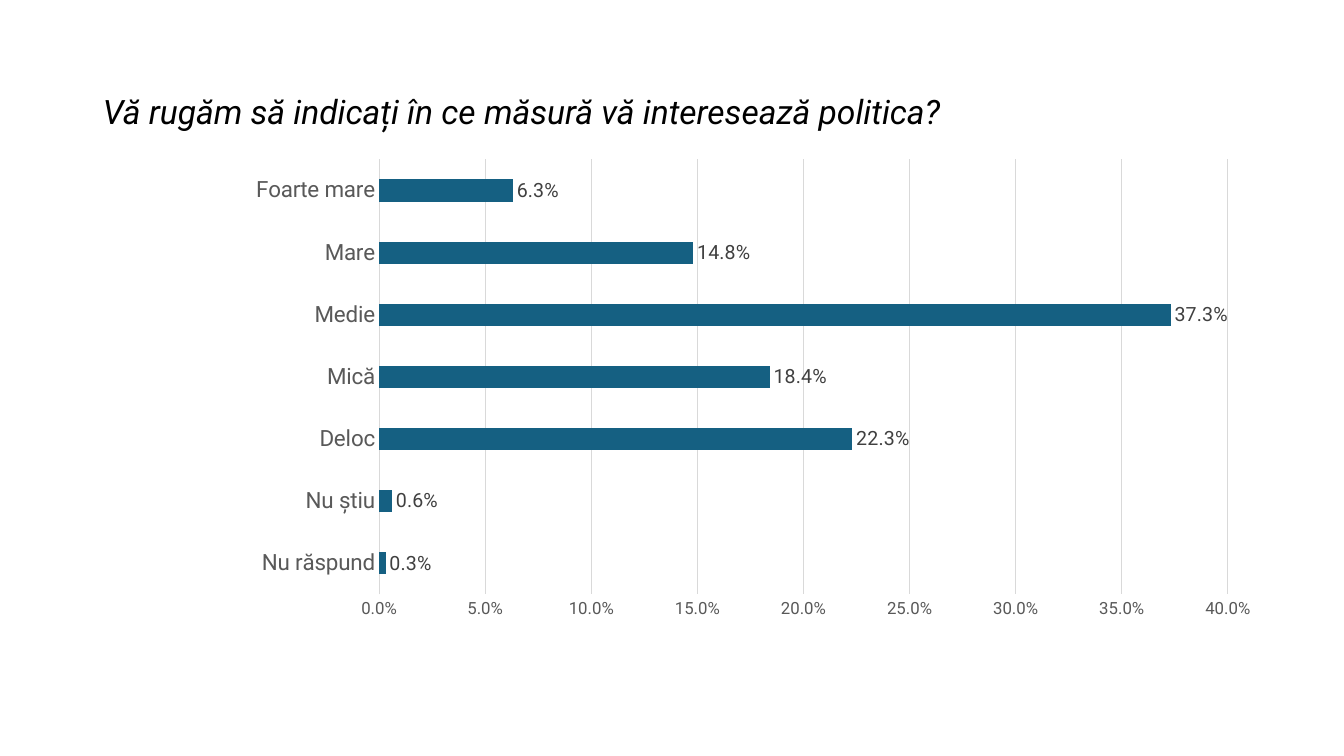
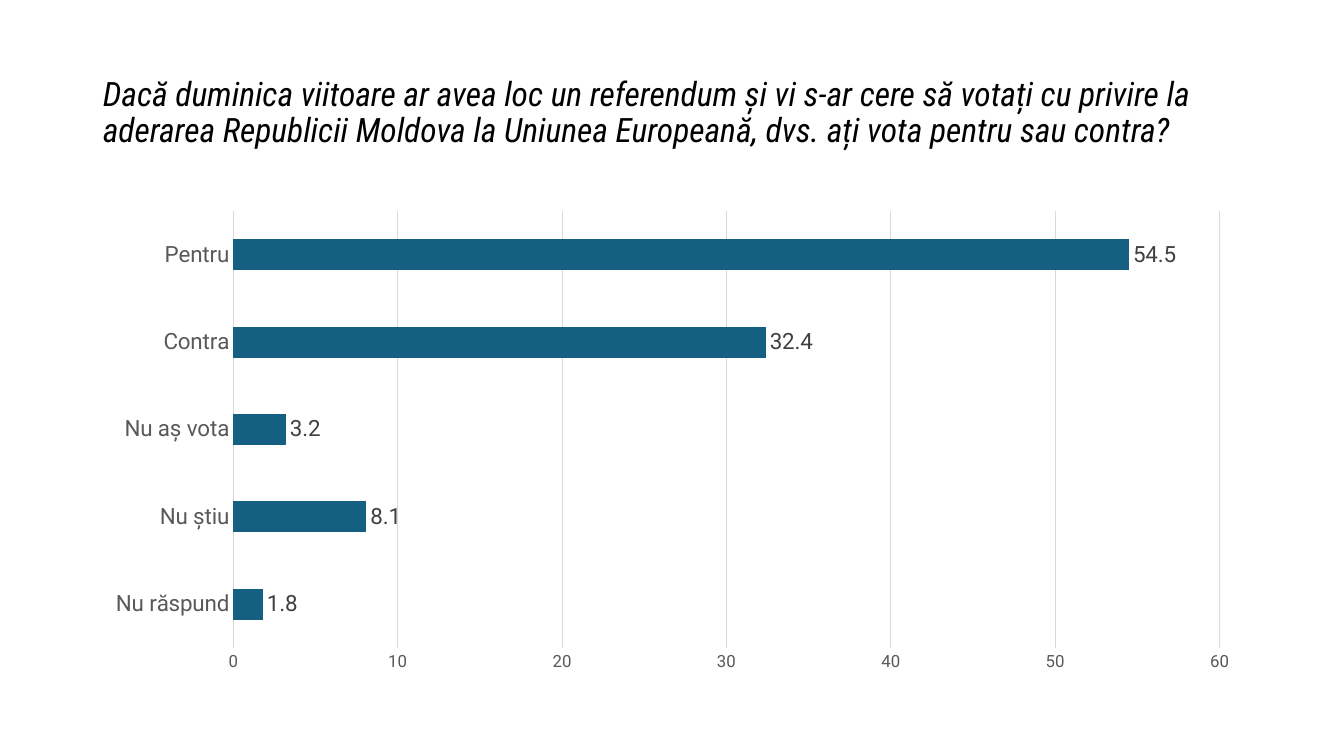
from pptx import Presentation
from pptx.chart.data import CategoryChartData
from pptx.dml.color import RGBColor
from pptx.enum.chart import XL_CHART_TYPE, XL_LABEL_POSITION, XL_TICK_MARK
from pptx.enum.text import MSO_ANCHOR, MSO_AUTO_SIZE, PP_ALIGN
from pptx.oxml import parse_xml
from pptx.oxml.ns import nsdecls, qn
from pptx.util import Inches, Pt

BLACK = RGBColor(0x00, 0x00, 0x00)
GRAY = RGBColor(0x59, 0x59, 0x59)
DARK = RGBColor(0x40, 0x40, 0x40)
GRID = RGBColor(0xD9, 0xD9, 0xD9)
TEAL = RGBColor(0x15, 0x60, 0x82)
FONT = "Roboto"
LEFT, WIDTH, BOTTOM = 0.92, 11.5, 6.76

# Answers run from the bottom bar to the top one.
POLLS = [
    dict(
        title="Vă rugăm să indicați în ce măsură vă interesează politica?",
        font=FONT,
        top=1.4,
        answers={
            "Nu răspund": 0.003,
            "Nu știu": 0.006,
            "Deloc": 0.223,
            "Mică": 0.184,
            "Medie": 0.373,
            "Mare": 0.148,
            "Foarte mare": 0.063,
        },
        form="0.0%",
        size=14,
        limit=0.4,
        step=0.05,
        plot=dict(x=0.247, y=0.034, w=0.732, h=0.805),
    ),
    dict(
        title="Dacă duminica viitoare ar avea loc un referendum și vi s-ar cere "
        "să votați cu privire la aderarea Republicii Moldova la Uniunea "
        "Europeană, dvs. ați vota pentru sau contra?",
        font="Roboto Condensed",
        top=2,
        answers={
            "Nu răspund": 1.8,
            "Nu știu": 8.1,
            "Nu aș vota": 3.2,
            "Contra": 32.4,
            "Pentru": 54.5,
        },
        form="General",
        size=16,
        limit=60,
        step=10,
        plot=None,
    ),
]


def style(font, size, color, name=FONT, italic=False):
    font.size, font.name, font.italic = Pt(size), name, italic
    font.bold = False
    font.color.rgb = color


def write(shape, text, align=PP_ALIGN.LEFT, **look):
    frame = shape.text_frame
    frame.word_wrap = True
    frame.auto_size = MSO_AUTO_SIZE.NONE
    frame.vertical_anchor = MSO_ANCHOR.MIDDLE
    line = frame.paragraphs[0]
    line.alignment, line.line_spacing = align, 0.9
    run = line.add_run()
    run.text = text
    style(run.font, **look)


def draw_line(form):
    form.line.color.rgb = GRID
    form.line.width = Pt(0.75)


def place_plot(chart, plot):
    """Fix the inner plot area, given as fractions of the chart."""
    area = chart.element.find(".//" + qn("c:plotArea"))
    for old in area.findall(qn("c:layout")):
        area.remove(old)
    modes = "".join(f'<c:{key}Mode val="edge"/>' for key in "xy")
    sizes = "".join(f'<c:{key} val="{part}"/>' for key, part in plot.items())
    area.insert(0, parse_xml(
        f'<c:layout {nsdecls("c")}><c:manualLayout>'
        f'<c:layoutTarget val="inner"/>{modes}{sizes}'
        "</c:manualLayout></c:layout>"))


def add_bars(slide, poll):
    data = CategoryChartData(number_format=poll["form"])
    data.categories = list(poll["answers"])
    data.add_series("Series 1", list(poll["answers"].values()))
    chart = slide.shapes.add_chart(
        XL_CHART_TYPE.BAR_CLUSTERED, Inches(LEFT), Inches(poll["top"]),
        Inches(WIDTH), Inches(BOTTOM - poll["top"]), data).chart
    chart.has_title = chart.has_legend = False
    style(chart.font, 10, BLACK)

    names, scale = chart.category_axis, chart.value_axis
    for axis, size in ((names, 16), (scale, 12)):
        axis.major_tick_mark = axis.minor_tick_mark = XL_TICK_MARK.NONE
        style(axis.tick_labels.font, size, GRAY)
    draw_line(names.format)
    scale.format.line.fill.background()
    scale.has_major_gridlines = True
    draw_line(scale.major_gridlines.format)
    scale.minimum_scale, scale.maximum_scale = 0, poll["limit"]
    scale.major_unit = poll["step"]
    scale.tick_labels.number_format = poll["form"]
    scale.tick_labels.number_format_is_linked = False

    bars = chart.plots[0]
    bars.gap_width, bars.vary_by_categories = 182, False
    fill = bars.series[0].format.fill
    fill.solid()
    fill.fore_color.rgb = TEAL
    bars.has_data_labels = True
    labels = bars.data_labels
    labels.show_value = True
    labels.position = XL_LABEL_POSITION.OUTSIDE_END
    labels.number_format = poll["form"]
    labels.number_format_is_linked = False
    style(labels.font, poll["size"], DARK)
    if poll["plot"]:
        place_plot(chart, poll["plot"])


def main():
    deck = Presentation()
    deck.slide_width, deck.slide_height = Inches(13.33), Inches(7.5)
    for poll in POLLS:
        slide = deck.slides.add_slide(deck.slide_layouts[5])
        title = slide.shapes.title
        title.left, title.top = Inches(LEFT), Inches(0.4)
        title.width, title.height = Inches(WIDTH), Inches(1.45)
        write(title, poll["title"], size=24, color=BLACK,
              name=poll["font"], italic=True)
        add_bars(slide, poll)
    deck.save("out.pptx")


if __name__ == "__main__":
    main()
